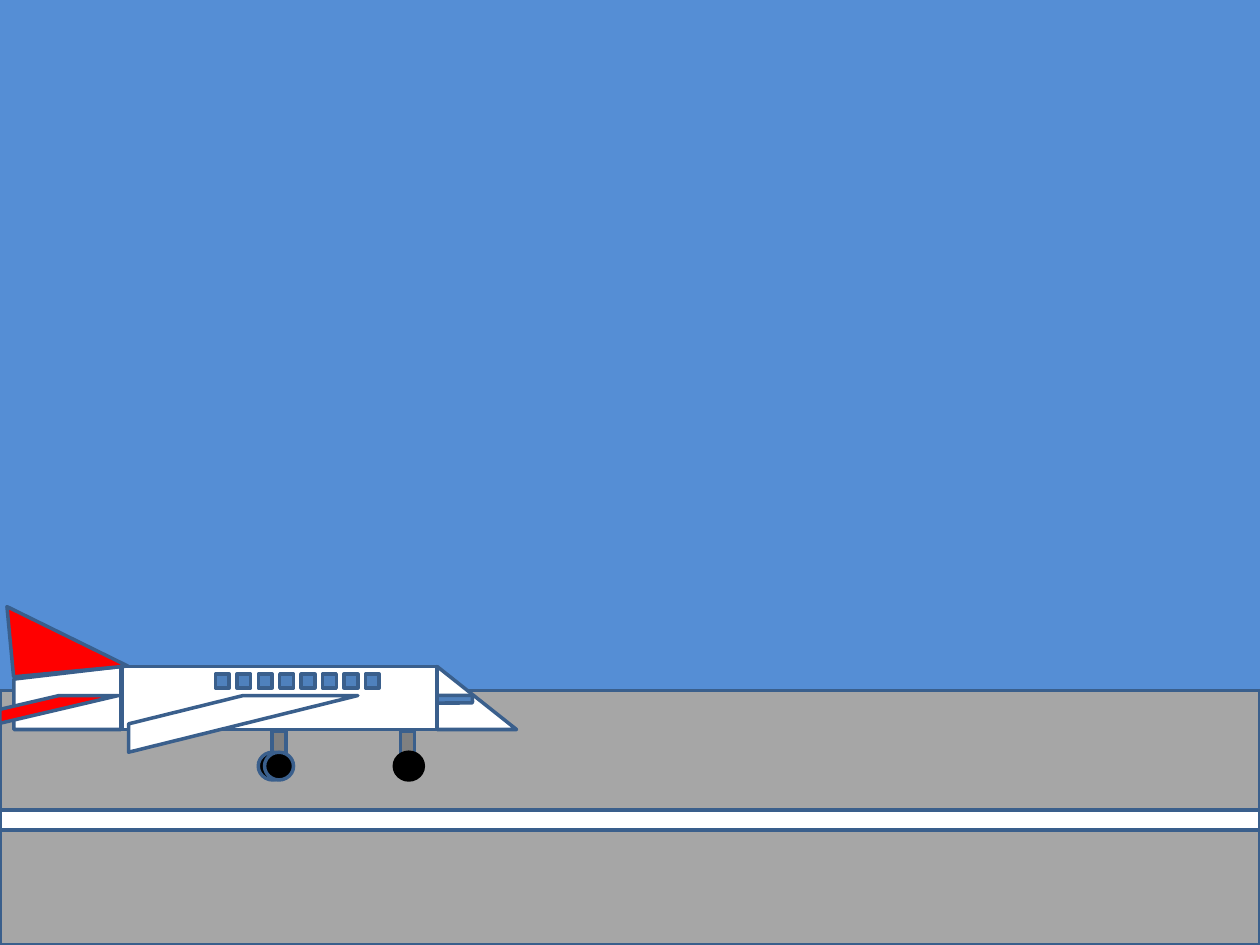
from pptx import Presentation
from pptx.dml.color import RGBColor
from pptx.enum.shapes import MSO_SHAPE
from pptx.util import Pt

RECT = MSO_SHAPE.RECTANGLE
ROUNDED = MSO_SHAPE.ROUNDED_RECTANGLE
TRIANGLE = MSO_SHAPE.RIGHT_TRIANGLE
STRIPE = MSO_SHAPE.DIAGONAL_STRIPE
OVAL = MSO_SHAPE.OVAL
SLOPED = MSO_SHAPE.FLOWCHART_MANUAL_INPUT

SKY = RGBColor(0x55, 0x8E, 0xD5)
TARMAC = RGBColor(0xA6, 0xA6, 0xA6)
OUTLINE = RGBColor(0x3A, 0x5F, 0x8C)
GLASS = RGBColor(0x4F, 0x81, 0xBD)
STEEL = RGBColor(0x80, 0x80, 0x80)
WHITE = RGBColor(0xFF, 0xFF, 0xFF)
RED = RGBColor(0xFF, 0x00, 0x00)
BLACK = RGBColor(0x00, 0x00, 0x00)

SLIDE_W, SLIDE_H = 720, 540
WINDOW_COUNT, WINDOW_SIZE, WINDOW_PITCH = 8, 7.92, 12.24


def add_part(group, origin, kind, box, fill, line=OUTLINE):
    """Add one outlined shape, its box in points relative to the origin."""
    left, top, width, height = box
    part = group.shapes.add_shape(
        kind, Pt(origin[0] + left), Pt(origin[1] + top), Pt(width), Pt(height))
    part.shadow.inherit = False
    part.fill.solid()
    part.fill.fore_color.rgb = fill
    part.line.color.rgb = line
    part.line.width = Pt(2)
    return part


def add_runway(slide, left, top, width, height):
    """Draw the tarmac with its white centre line."""
    runway = slide.shapes.add_group_shape()
    origin = left, top
    add_part(runway, origin, RECT, (0, 0, width, height), TARMAC)
    add_part(runway, origin, RECT, (0, 68.4, width, 11.52), WHITE)


def add_landing_gear(plane, origin, strut_left, wheel_lefts, wheel_line):
    """Draw a strut and the wheels in front of it."""
    add_part(plane, origin, RECT, (strut_left, 74.16, 7.92, 15.84), STEEL)
    for wheel_left in wheel_lefts:
        add_part(plane, origin, OVAL, (wheel_left, 86.4, 16.56, 15.84), BLACK, wheel_line)


def add_plane(slide, left, top):
    """Draw the plane facing right, from the fuselage to the tailplane."""
    plane = slide.shapes.add_group_shape()
    origin = left, top
    add_part(plane, origin, RECT, (69.84, 37.44, 180, 36), WHITE)
    add_part(plane, origin, TRIANGLE, (249.84, 37.44, 45.36, 36), WHITE)
    add_part(plane, origin, STRIPE, (73.44, 54, 131.04, 32.4), WHITE)
    add_landing_gear(plane, origin, 228.96, [225.36], BLACK)
    add_landing_gear(plane, origin, 155.52, [147.6, 151.2], OUTLINE)
    add_part(plane, origin, SLOPED, (7.92, 37.44, 61.2, 36), WHITE)
    fin = add_part(plane, origin, TRIANGLE, (5.76, 0, 65.52, 40.32), RED)
    fin.rotation = 354.6
    for index in range(WINDOW_COUNT):
        window_left = 123.12 + index * WINDOW_PITCH
        add_part(plane, origin, RECT, (window_left, 41.76, WINDOW_SIZE, WINDOW_SIZE), GLASS)
    add_part(plane, origin, ROUNDED, (249.84, 54, 20.16, 4.32), GLASS)
    add_part(plane, origin, STRIPE, (0, 54, 67.68, 15.84), RED)


def main():
    """Build the runway slide and save it."""
    deck = Presentation()
    deck.slide_width, deck.slide_height = Pt(SLIDE_W), Pt(SLIDE_H)
    slide = deck.slides.add_slide(deck.slide_layouts[6])
    slide.background.fill.solid()
    slide.background.fill.fore_color.rgb = SKY
    add_runway(slide, 0, 394.56, SLIDE_W, 145.44)
    add_plane(slide, 0, 343.44)
    deck.save("out.pptx")


if __name__ == "__main__":
    main()
